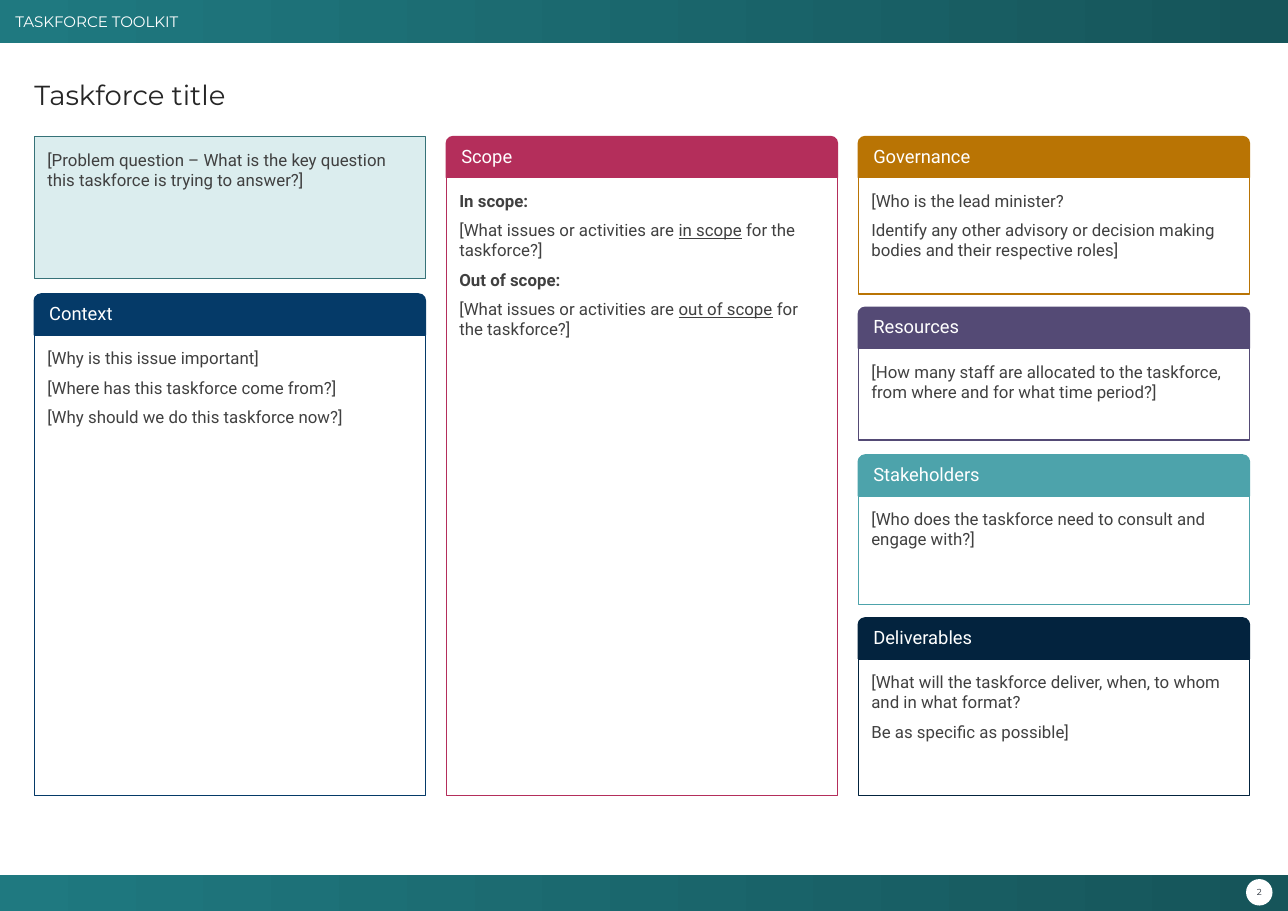
from dataclasses import dataclass

from pptx import Presentation
from pptx.dml.color import RGBColor
from pptx.enum.shapes import MSO_SHAPE
from pptx.enum.text import MSO_ANCHOR, MSO_AUTO_SIZE, PP_ALIGN
from pptx.util import Pt

RECTANGLE = MSO_SHAPE.RECTANGLE
ROUNDED_TOP = MSO_SHAPE.ROUND_2_SAME_RECTANGLE
CIRCLE = MSO_SHAPE.OVAL
TOP, MIDDLE = MSO_ANCHOR.TOP, MSO_ANCHOR.MIDDLE
LEFT, CENTER = PP_ALIGN.LEFT, PP_ALIGN.CENTER
NO_AUTOFIT = MSO_AUTO_SIZE.NONE
TITLE_ONLY = 5

SLIDE_WIDTH, SLIDE_HEIGHT = 841.68, 595.44
COLUMN_LEFT, COLUMN_PITCH, COLUMN_WIDTH = 22.4, 269.25, 255.6
COLUMN_TOP, COLUMN_BOTTOM = 89.3, 520.1
HEADER_HEIGHT = 26.7


@dataclass(frozen=True)
class Theme:
    heading_font: str = "Montserrat"
    body_font: str = "Roboto"
    title_size: float = 18
    header_size: float = 12
    body_size: float = 11
    banner_size: float = 9.9
    number_size: float = 5.7
    white: str = "FFFFFF"
    title: str = "262626"
    body: str = "404040"
    number: str = "222A35"
    band_start: str = "1F7980"
    band_end: str = "16555A"
    question_fill: str = "DBEDEE"
    question_line: str = "367278"
    context: str = "053A68"
    scope: str = "B42E5B"
    governance: str = "B97404"
    resources: str = "544A75"
    stakeholders: str = "4DA3AB"
    deliverables: str = "03233E"


class Canvas:
    def __init__(self, slide, theme):
        self.slide = slide
        self.theme = theme

    def shape(self, kind, left, top, width, height, fill=None, line=None):
        shape = self.slide.shapes.add_shape(kind, Pt(left), Pt(top), Pt(width), Pt(height))
        shape.shadow.inherit = False
        if fill:
            shape.fill.solid()
            shape.fill.fore_color.rgb = RGBColor.from_string(fill)
        if line:
            shape.line.color.rgb = RGBColor.from_string(line)
            shape.line.width = Pt(1)
        else:
            shape.line.fill.background()
        return shape

    def text(self, shape, paragraphs, font, size, color, insets=(0, 0, 0, 0),
             anchor=MIDDLE, align=LEFT, space_after=0, line_spacing=1.0, wrap=True):
        """Each paragraph is a list of (text, style) runs; style is "", "bold" or "underline"."""
        frame = shape.text_frame
        frame.word_wrap = wrap
        frame.auto_size = NO_AUTOFIT
        frame.vertical_anchor = anchor
        (frame.margin_left, frame.margin_top,
         frame.margin_right, frame.margin_bottom) = map(Pt, insets)
        for index, runs in enumerate(paragraphs):
            paragraph = frame.add_paragraph() if index else frame.paragraphs[0]
            paragraph.alignment = align
            paragraph.space_after = Pt(space_after)
            paragraph.line_spacing = line_spacing
            for content, style in runs:
                run = paragraph.add_run()
                run.text = content
                run.font.name = font
                run.font.size = Pt(size)
                run.font.color.rgb = RGBColor.from_string(color)
                run.font.bold = style == "bold"
                run.font.underline = style == "underline"

    def title(self, content):
        title = self.slide.shapes.title
        title.left, title.top, title.width, title.height = map(Pt, (COLUMN_LEFT, 49, 562.3, 53.3))
        self.text(title, [[(content, "")]], self.theme.heading_font, self.theme.title_size,
                  self.theme.title, anchor=TOP, line_spacing=1.1)

    def band(self, top, height):
        band = self.shape(RECTANGLE, 0, top, SLIDE_WIDTH, height)
        band.fill.gradient()
        band.fill.gradient_angle = 0
        for stop, color in zip(band.fill.gradient_stops,
                               (self.theme.band_start, self.theme.band_end)):
            stop.color.rgb = RGBColor.from_string(color)
        return band

    def page_number(self, number):
        circle = self.shape(CIRCLE, 814.3, 574.6, 17.3, 17.3, self.theme.white)
        self.text(circle, [[(number, "")]], self.theme.heading_font, self.theme.number_size,
                  self.theme.number, align=CENTER, wrap=False)

    def box(self, column, top, bottom, fill, line, paragraphs):
        left = COLUMN_LEFT + column * COLUMN_PITCH
        box = self.shape(RECTANGLE, left, top, COLUMN_WIDTH, bottom - top, fill, line)
        self.text(box, paragraphs, self.theme.body_font, self.theme.body_size, self.theme.body,
                  insets=(8.5, 8.5, 8.5, 8.5), anchor=TOP, space_after=6)

    def panel(self, column, top, bottom, color, heading, paragraphs):
        """A box under a coloured heading tab."""
        left = COLUMN_LEFT + column * COLUMN_PITCH
        header = self.shape(ROUNDED_TOP, left, top, COLUMN_WIDTH, HEADER_HEIGHT, color, color)
        self.text(header, [[(heading, "")]], self.theme.body_font, self.theme.header_size,
                  self.theme.white, insets=(8.5, 0, 0, 2.8))
        self.box(column, top + HEADER_HEIGHT, bottom, self.theme.white, color, paragraphs)


def plain(*lines):
    return [[(line, "")] for line in lines]


def scope_entry(label):
    return [
        [(f"{label} scope:", "bold")],
        [("[What issues or activities are ", ""), (f"{label.lower()} scope", "underline"),
         (" for the taskforce?]", "")],
    ]


def main():
    presentation = Presentation()
    presentation.slide_width, presentation.slide_height = Pt(SLIDE_WIDTH), Pt(SLIDE_HEIGHT)
    slide = presentation.slides.add_slide(presentation.slide_layouts[TITLE_ONLY])
    theme = Theme()
    canvas = Canvas(slide, theme)

    banner = canvas.band(0, 28)
    canvas.text(banner, plain("TASKFORCE TOOLKIT"), theme.heading_font, theme.banner_size,
                theme.white, insets=(10, 4.3, 5, 4.3))
    canvas.band(571.7, SLIDE_HEIGHT - 571.7)
    canvas.page_number("2")
    canvas.title("Taskforce title")

    canvas.box(0, COLUMN_TOP, 182, theme.question_fill, theme.question_line, plain(
        "[Problem question – What is the key question this taskforce is trying to answer?]"))

    panels = [
        (0, 192.2, COLUMN_BOTTOM, theme.context, "Context", plain(
            "[Why is this issue important]",
            "[Where has this taskforce come from?]",
            "[Why should we do this taskforce now?]")),
        (1, COLUMN_TOP, COLUMN_BOTTOM, theme.scope, "Scope",
         scope_entry("In") + scope_entry("Out of")),
        (2, COLUMN_TOP, 192.2, theme.governance, "Governance", plain(
            "[Who is the lead minister?",
            "Identify any other advisory or decision making bodies and their respective roles]")),
        (2, 200.9, 287.8, theme.resources, "Resources", plain(
            "[How many staff are allocated to the taskforce, "
            "from where and for what time period?]")),
        (2, 297.4, 395.1, theme.stakeholders, "Stakeholders", plain(
            "[Who does the taskforce need to consult and engage with?]")),
        (2, 403.9, COLUMN_BOTTOM, theme.deliverables, "Deliverables", plain(
            "[What will the taskforce deliver, when, to whom and in what format?",
            "Be as specific as possible]")),
    ]
    for panel in panels:
        canvas.panel(*panel)

    presentation.save("out.pptx")


if __name__ == "__main__":
    main()
